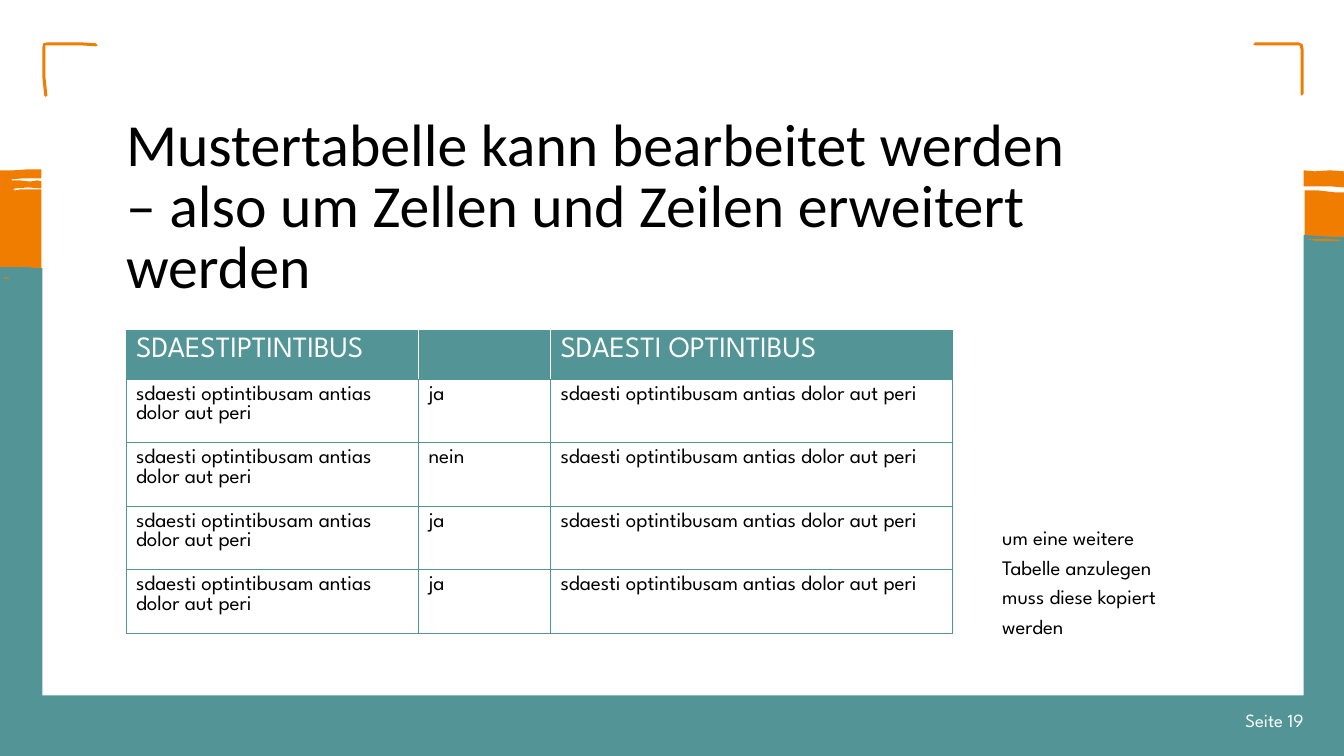
from dataclasses import dataclass

from lxml.etree import SubElement
from pptx import Presentation
from pptx.dml.color import RGBColor as Rgb
from pptx.enum.text import PP_ALIGN as Align
from pptx.oxml.ns import qn
from pptx.util import Inches, Pt


@dataclass(frozen=True)
class Theme:
    teal: str = "539596"
    orange: str = "F07D00"
    black: str = "000000"
    white: str = "FFFFFF"
    heading_font: str = "Calibri"
    body_font: str = "League Spartan"
    title_size: float = 42.7
    header_size: float = 21
    cell_size: float = 15
    note_size: float = 14.7
    page_size: float = 13.3
    border_width: float = 0.75


class SlideBuilder:
    def __init__(self, page, theme):
        self.page = page
        self.theme = theme

    def style(self, para, font, size, color):
        para.font.name = font
        para.font.size = Pt(size)
        para.font.color.rgb = Rgb.from_string(color)

    def outline(self, contours, color):
        """Draw closed contours, given in hundredths of an inch, as one shape."""
        start, *rest = contours[0]
        builder = self.page.shapes.build_freeform(*start, scale=Inches(0.01))
        builder.add_line_segments(rest, close=True)
        for start, *rest in contours[1:]:
            builder.move_to(*start)
            builder.add_line_segments(rest, close=True)
        shape = builder.convert_to_shape()
        shape.shadow.inherit = False
        shape.fill.solid()
        shape.fill.fore_color.rgb = Rgb.from_string(color)
        shape.line.fill.background()

    def text(self, area, lines, font, size, color, spacing=1.0,
             align=Align.LEFT, inset=(0, 0), wrap=True):
        box = self.page.shapes.add_textbox(*map(Inches, area))
        frame = box.text_frame
        frame.word_wrap = wrap
        frame.margin_left = frame.margin_right = Inches(inset[0])
        frame.margin_top = frame.margin_bottom = Inches(inset[1])
        frame.text = "\n".join(lines)
        for para in frame.paragraphs:
            para.line_spacing = spacing
            para.alignment = align
            self.style(para, font, size, color)

    def border(self, cell, side, color):
        line = SubElement(cell._tc.get_or_add_tcPr(), qn(f"a:ln{side}"),
                          w=str(Pt(self.theme.border_width)))
        fill = SubElement(line, qn("a:solidFill"))
        SubElement(fill, qn("a:srgbClr"), val=color)

    def cell(self, cell, text, is_header, inner_sides):
        theme = self.theme
        cell.margin_left = cell.margin_right = Inches(0.1)
        cell.margin_top = cell.margin_bottom = Pt(4.7)
        cell.text = text
        self.style(cell.text_frame.paragraphs[0], theme.body_font,
                   theme.header_size if is_header else theme.cell_size,
                   theme.white if is_header else theme.black)
        # Borders come before the fill in the cell properties
        for side in "LRTB":
            white = is_header and side in inner_sides
            self.border(cell, side, theme.white if white else theme.teal)
        if is_header:
            cell.fill.solid()
            cell.fill.fore_color.rgb = Rgb.from_string(theme.teal)
        else:
            cell.fill.background()

    def table(self, left, top, widths, heights, rows):
        table = self.page.shapes.add_table(
            len(rows), len(widths), Inches(left), Inches(top),
            Inches(sum(widths)), Inches(sum(heights))).table
        table.horz_banding = False
        for column, width in zip(table.columns, widths):
            column.width = Inches(width)
        for row, height in zip(table.rows, heights):
            row.height = Inches(height)
        last = len(widths) - 1
        for r, row in enumerate(rows):
            for c, text in enumerate(row):
                inner = ("L" if c > 0 else "") + ("R" if c < last else "")
                self.cell(table.cell(r, c), text, r == 0, inner)


# Hand-drawn outlines, in hundredths of an inch
LEFT_BRACKET = [
    (45, 96), (44, 95), (43, 86), (42, 76), (42, 47), (43, 43), (47, 42),
    (80, 42), (95, 43), (97, 45), (95, 46), (80, 45), (45, 45), (45, 76),
    (46, 85), (47, 95)]
RIGHT_BRACKET = [
    (1291, 95), (1290, 93), (1290, 49), (1289, 45), (1245, 45), (1243, 44),
    (1245, 42), (1288, 42), (1292, 44), (1293, 49), (1293, 93)]
LEFT_BRUSH = [
    (41, 177), (41, 168), (28, 168), (14, 169), (0, 169), (0, 491),
    (17, 490), (41, 487), (41, 188), (20, 188), (15, 189), (13, 188),
    (15, 187), (28, 186), (41, 187), (41, 180), (37, 179), (31, 180),
    (28, 180), (20, 179), (12, 179), (11, 178), (23, 177)]
RIGHT_BRUSH_TOP = [
    (1293, 169), (1304, 170), (1319, 169), (1333, 170), (1333, 186),
    (1321, 185), (1293, 185)]
RIGHT_BRUSH = [
    (1294, 189), (1308, 189), (1325, 191), (1333, 191), (1333, 441),
    (1294, 443)]
FRAME = [
    (1333, 750), (1333, 235), (1321, 235), (1304, 234), (1293, 233),
    (1293, 237), (1312, 237), (1331, 238), (1329, 239), (1314, 239),
    (1303, 239), (1300, 237), (1300, 238), (1293, 237), (1293, 690),
    (42, 690), (42, 266), (35, 266), (28, 265), (0, 265), (0, 750)]
FRAME_GAPS = [
    [(138, 727), (138, 728), (137, 729)],
    [(11, 277), (2, 276), (6, 275)]]

SAMPLE = "sdaesti optintibusam antias dolor aut peri"
ROWS = [("SDAESTIPTINTIBUS", "", "SDAESTI OPTINTIBUS")] + [
    (SAMPLE, answer, SAMPLE) for answer in ("ja", "nein", "ja", "ja")]


def main():
    theme = Theme()
    deck = Presentation()
    deck.slide_width, deck.slide_height = Inches(13.33), Inches(7.5)
    page = deck.slides.add_slide(deck.slide_layouts[6])
    builder = SlideBuilder(page, theme)

    # Corner brackets, brush strokes and frame
    for contour in (LEFT_BRACKET, RIGHT_BRACKET, LEFT_BRUSH,
                    RIGHT_BRUSH_TOP, RIGHT_BRUSH):
        builder.outline([contour], theme.orange)
    builder.outline([FRAME, *FRAME_GAPS], theme.teal)

    # Title
    builder.text((1.25, 1.17, 10.81, 1.31),
                 ["Mustertabelle kann bearbeitet werden \v"
                  "– also um Zellen und Zeilen erweitert werden"],
                 theme.heading_font, theme.title_size, theme.black, 0.85)

    # Side note
    builder.text((9.84, 5.11, 2.49, 1.59),
                 ["um eine weitere",
                  "Tabelle anzulegen \vmuss diese kopiert \vwerden"],
                 theme.body_font, theme.note_size, theme.black, 1.2,
                 inset=(0.1, 0.05))

    # Sample table
    builder.table(1.25, 3.28, [2.9, 1.31, 3.99], [0.48] + [0.62] * 4, ROWS)

    # Page number
    builder.text((12.07, 7.03, 0.86, 0.29), ["Seite 19"], theme.body_font,
                 theme.page_size, theme.white, align=Align.RIGHT, wrap=False)

    deck.save("out.pptx")


if __name__ == "__main__":
    main()
